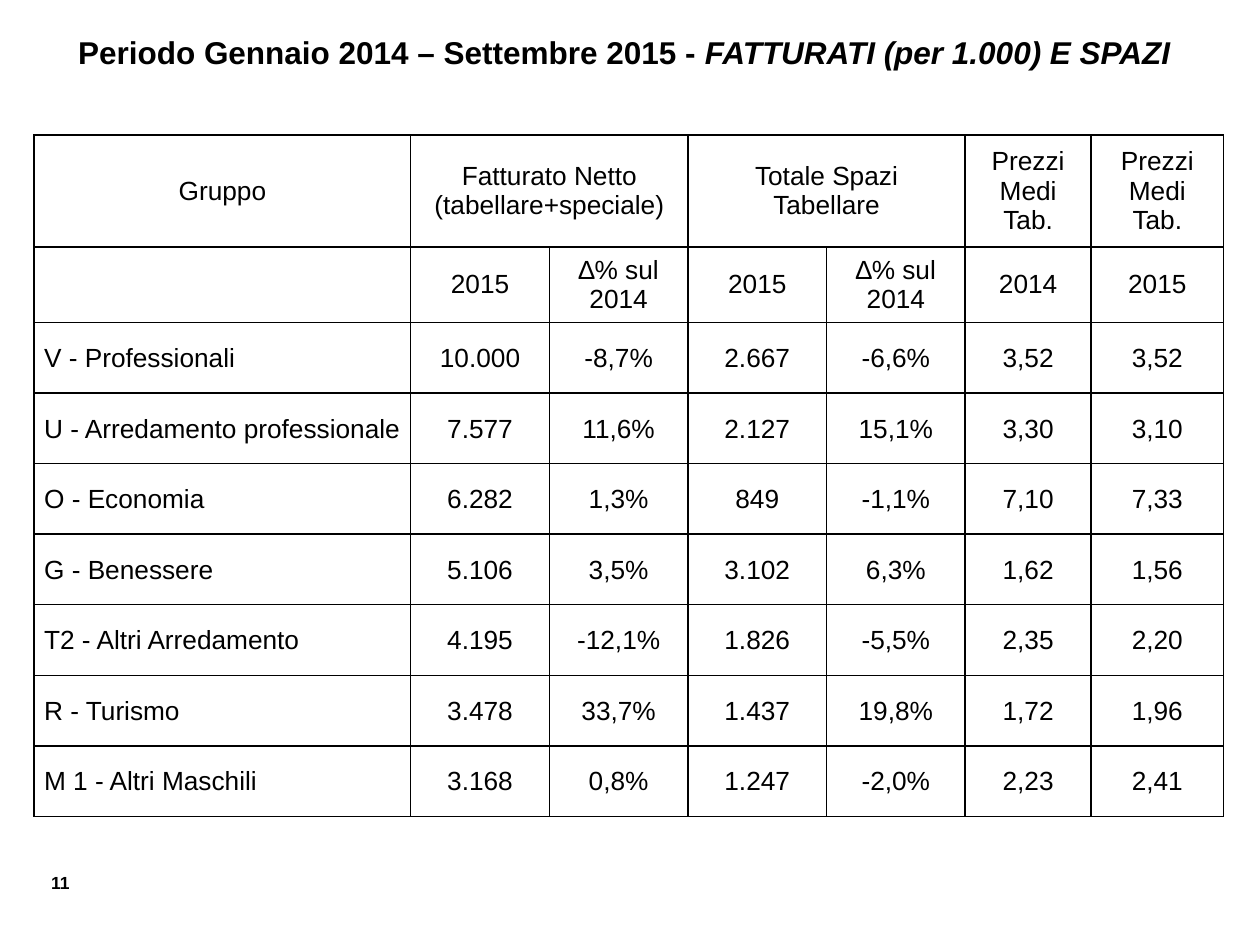
from lxml.etree import SubElement
from pptx import Presentation
from pptx.dml.color import RGBColor
from pptx.enum.text import MSO_ANCHOR as Anchor, PP_ALIGN as Align
from pptx.oxml.ns import qn
from pptx.util import Inches, Pt

COLORS = {"text": "000000", "border": "000000", "background": "FFFFFF"}
FONT = "Arial"
COLUMN_WIDTHS = [2.99, 1.1, 1.1, 1.1, 1.1, 1, 1.05]
ROW_HEIGHTS = [0.89, 0.6] + [0.56] * 7
HEADER_ROWS = 2
ROWS = [
    ["Gruppo", "Fatturato Netto (tabellare+speciale)", "", "Totale Spazi Tabellare", "",
     "Prezzi Medi Tab.", "Prezzi Medi Tab."],
    ["", "2015", "∆% sul 2014", "2015", "∆% sul 2014", "2014", "2015"],
    ["V - Professionali", "10.000", "-8,7%", "2.667", "-6,6%", "3,52", "3,52"],
    ["U - Arredamento professionale", "7.577", "11,6%", "2.127", "15,1%", "3,30", "3,10"],
    ["O - Economia", "6.282", "1,3%", "849", "-1,1%", "7,10", "7,33"],
    ["G - Benessere", "5.106", "3,5%", "3.102", "6,3%", "1,62", "1,56"],
    ["T2 - Altri Arredamento", "4.195", "-12,1%", "1.826", "-5,5%", "2,35", "2,20"],
    ["R - Turismo", "3.478", "33,7%", "1.437", "19,8%", "1,72", "1,96"],
    ["M 1 - Altri Maschili", "3.168", "0,8%", "1.247", "-2,0%", "2,23", "2,41"],
]


def add_run(paragraph, text, size, bold=False, italic=False):
    run = paragraph.add_run()
    run.text = text
    run.font.name = FONT
    run.font.size = Pt(size)
    run.font.bold = bold
    run.font.italic = italic
    run.font.color.rgb = RGBColor.from_string(COLORS["text"])


def add_borders(cell):
    properties = cell._tc.get_or_add_tcPr()
    for index, side in enumerate(("lnL", "lnR", "lnT", "lnB")):
        line = SubElement(properties, qn(f"a:{side}"), w=str(Pt(1)))
        fill = SubElement(line, qn("a:solidFill"))
        SubElement(fill, qn("a:srgbClr"), val=COLORS["border"])
        properties.insert(index, line)


presentation = Presentation()
presentation.slide_width = Inches(10)
presentation.slide_height = Inches(7.5)
slide = presentation.slides.add_slide(presentation.slide_layouts[6])
slide.background.fill.solid()
slide.background.fill.fore_color.rgb = RGBColor.from_string(COLORS["background"])

page_number = slide.shapes.add_textbox(Inches(0.19), Inches(6.87), Inches(0.46), Inches(0.27))
page_number.text_frame.word_wrap = True
paragraph = page_number.text_frame.paragraphs[0]
paragraph.alignment = Align.RIGHT
add_run(paragraph, "11", 10, bold=True)

title = slide.shapes.add_textbox(Inches(0.27), Inches(0.21), Inches(9.37), Inches(0.71))
title.text_frame.word_wrap = True
paragraph = title.text_frame.paragraphs[0]
paragraph.alignment = Align.CENTER
add_run(paragraph, "Periodo Gennaio 2014 – Settembre 2015 - ", 18, bold=True)
add_run(paragraph, "FATTURATI (per 1.000) E SPAZI", 18, bold=True, italic=True)

table = slide.shapes.add_table(
    len(ROWS), len(COLUMN_WIDTHS), Inches(0.27), Inches(1.07),
    Inches(sum(COLUMN_WIDTHS)), Inches(sum(ROW_HEIGHTS))
).table
table.first_row = False
table.horz_banding = False
for column, width in zip(table.columns, COLUMN_WIDTHS):
    column.width = Inches(width)
for row, height in zip(table.rows, ROW_HEIGHTS):
    row.height = Inches(height)
for first in (1, 3):
    table.cell(0, first).merge(table.cell(0, first + 1))

for row_index, values in enumerate(ROWS):
    for column_index, value in enumerate(values):
        cell = table.cell(row_index, column_index)
        is_label = row_index >= HEADER_ROWS and column_index == 0
        cell.fill.background()
        add_borders(cell)
        cell.vertical_anchor = Anchor.MIDDLE
        if row_index >= HEADER_ROWS:
            cell.margin_left = Inches(0.08 if is_label else 0.01)
            cell.margin_right = cell.margin_top = Inches(0.01)
            cell.margin_bottom = 0
        paragraph = cell.text_frame.paragraphs[0]
        paragraph.alignment = Align.LEFT if is_label else Align.CENTER
        if value:
            add_run(paragraph, value, 15)

presentation.save("out.pptx")
